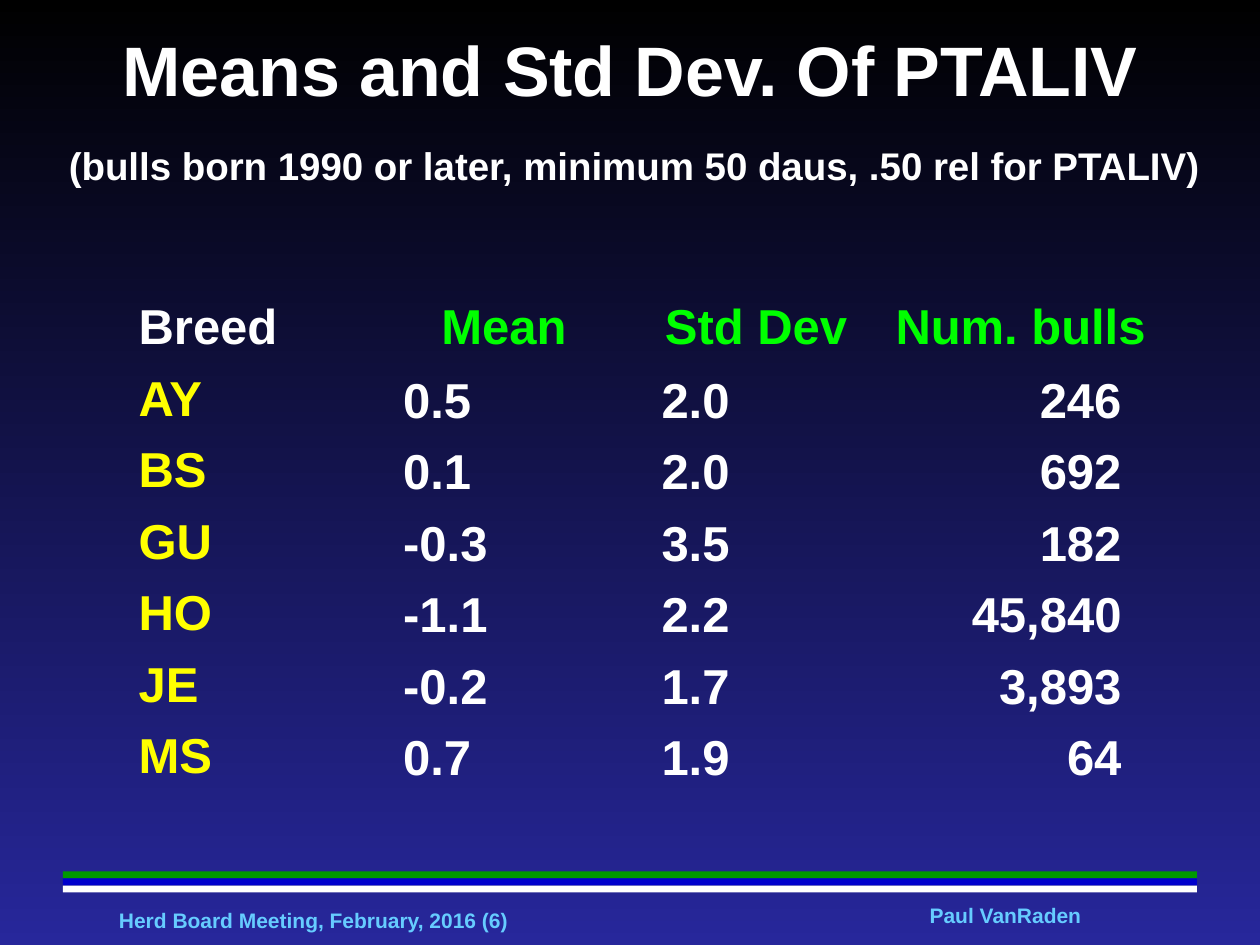
from lxml import etree
from pptx import Presentation
from pptx import util as u
from pptx.dml import color as c
from pptx.enum import shapes, text
from pptx.oxml import ns

COLORS = {
    "top": "000000", "bottom": "27279B", "white": "FFFFFF", "lime": "00FF00",
    "yellow": "FFFF00", "sky": "66CCFF", "green": "009900", "blue": "0000CC",
}
LEFT, CENTER, RIGHT = text.PP_ALIGN.LEFT, text.PP_ALIGN.CENTER, text.PP_ALIGN.RIGHT
TOP, MIDDLE = text.MSO_ANCHOR.TOP, text.MSO_ANCHOR.MIDDLE

HEADERS = ["Breed", "Mean", "Std Dev", "Num. bulls"]
BREEDS = [
    ["AY", "0.5", "2.0", "246"],
    ["BS", "0.1", "2.0", "692"],
    ["GU", "-0.3", "3.5", "182"],
    ["HO", "-1.1", "2.2", "45,840"],
    ["JE", "-0.2", "1.7", "3,893"],
    ["MS", "0.7", "1.9", "64"],
]
# Body columns: color, alignment, anchor, left margin, right margin
BODY_COLUMNS = [
    ("yellow", LEFT, TOP, 7.2, 7.2),
    ("white", LEFT, MIDDLE, 14.4, 7.2),
    ("white", LEFT, MIDDLE, 18, 7.2),
    ("white", RIGHT, MIDDLE, 18, 21.6),
]


class SlideBuilder:
    font = "Arial"

    def __init__(self, presentation):
        self.slide = presentation.slides.add_slide(presentation.slide_layouts[5])

    def color(self, name):
        return c.RGBColor.from_string(COLORS[name])

    def background(self, first, last):
        fill = self.slide.background.fill
        fill.gradient()
        fill.gradient_angle = 270
        for stop, name, position in zip(fill.gradient_stops, (first, last), (0, 1)):
            stop.color.rgb = self.color(name)
            stop.position = position

    def run(self, paragraph, words, size, color):
        run = paragraph.add_run()
        run.text = words
        run.font.name, run.font.size, run.font.bold = self.font, u.Pt(size), True
        run.font.color.rgb = self.color(color)

    def title(self, box, heading, subtitle):
        shape = self.slide.shapes.title
        shape.left, shape.top, shape.width, shape.height = map(u.Pt, box)
        frame = shape.text_frame
        frame.word_wrap = True
        frame.vertical_anchor = MIDDLE
        paragraph = frame.paragraphs[0]
        paragraph.alignment = CENTER
        self.run(paragraph, heading, 40, "white")
        paragraph.add_line_break()
        self.run(paragraph, " ", 40, "white")
        self.run(paragraph, subtitle, 22, "white")

    def label(self, box, words, alignment, wrap):
        frame = self.slide.shapes.add_textbox(*map(u.Pt, box)).text_frame
        frame.margin_left = frame.margin_right = frame.margin_top = frame.margin_bottom = 0
        frame.word_wrap = wrap
        frame.vertical_anchor = MIDDLE
        paragraph = frame.paragraphs[0]
        paragraph.alignment = alignment
        self.run(paragraph, words, 12, "sky")

    def bar(self, box, color):
        shape = self.slide.shapes.add_shape(shapes.MSO_SHAPE.RECTANGLE, *map(u.Pt, box))
        shape.shadow.inherit = False
        shape.fill.solid()
        shape.fill.fore_color.rgb = self.color(color)
        shape.line.fill.background()

    def cell(self, cell, words, color, alignment, anchor, left=7.2, right=7.2):
        cell.fill.background()
        cell.vertical_anchor = anchor
        cell.margin_left, cell.margin_right = u.Pt(left), u.Pt(right)
        # Borders off; they precede the fill in the cell properties
        properties = cell._tc.get_or_add_tcPr()
        for index, side in enumerate(("a:lnL", "a:lnR", "a:lnT", "a:lnB")):
            border = etree.Element(ns.qn(side), w="0")
            etree.SubElement(border, ns.qn("a:noFill"))
            properties.insert(index, border)
        paragraph = cell.text_frame.paragraphs[0]
        paragraph.alignment = alignment
        self.run(paragraph, words, 28, color)

    def table(self, left, top, widths, row_height, headers, rows):
        count = len(rows) + 1
        table = self.slide.shapes.add_table(
            count, len(widths), u.Pt(left), u.Pt(top),
            u.Pt(sum(widths)), u.Pt(row_height * count)).table
        table.first_row = table.horz_banding = False
        for column, width in zip(table.columns, widths):
            column.width = u.Pt(width)
        for index, words in enumerate(headers):
            color, alignment = ("lime", CENTER) if index else ("white", LEFT)
            self.cell(table.cell(0, index), words, color, alignment, TOP)
        for row_index, row in enumerate(rows, 1):
            for index, (words, style) in enumerate(zip(row, BODY_COLUMNS)):
                self.cell(table.cell(row_index, index), words, *style)


def main():
    presentation = Presentation()
    presentation.slide_width, presentation.slide_height = u.Pt(720), u.Pt(540)
    builder = SlideBuilder(presentation)
    builder.background("top", "bottom")

    # Title with the selection criteria below it
    builder.title((0, 18, 720, 90), "Means and Std Dev. Of PTALIV",
                  "(bulls born 1990 or later, minimum 50 daus, .50 rel for PTALIV) ")

    # Footer: three stripes and two labels
    for index, color in enumerate(("green", "blue", "white")):
        builder.bar((36, 498 + 4 * index, 648, 4), color)
    builder.label((68, 518.6, 340, 14.4), "Herd Board Meeting, February, 2016 (6)", LEFT, True)
    builder.label((530.6, 516, 88, 14.4), "Paul VanRaden", CENTER, False)

    # Statistics by breed
    builder.table(72, 168, (144, 144, 144, 158.4), 40.83, HEADERS, BREEDS)

    presentation.save("out.pptx")


if __name__ == "__main__":
    main()
